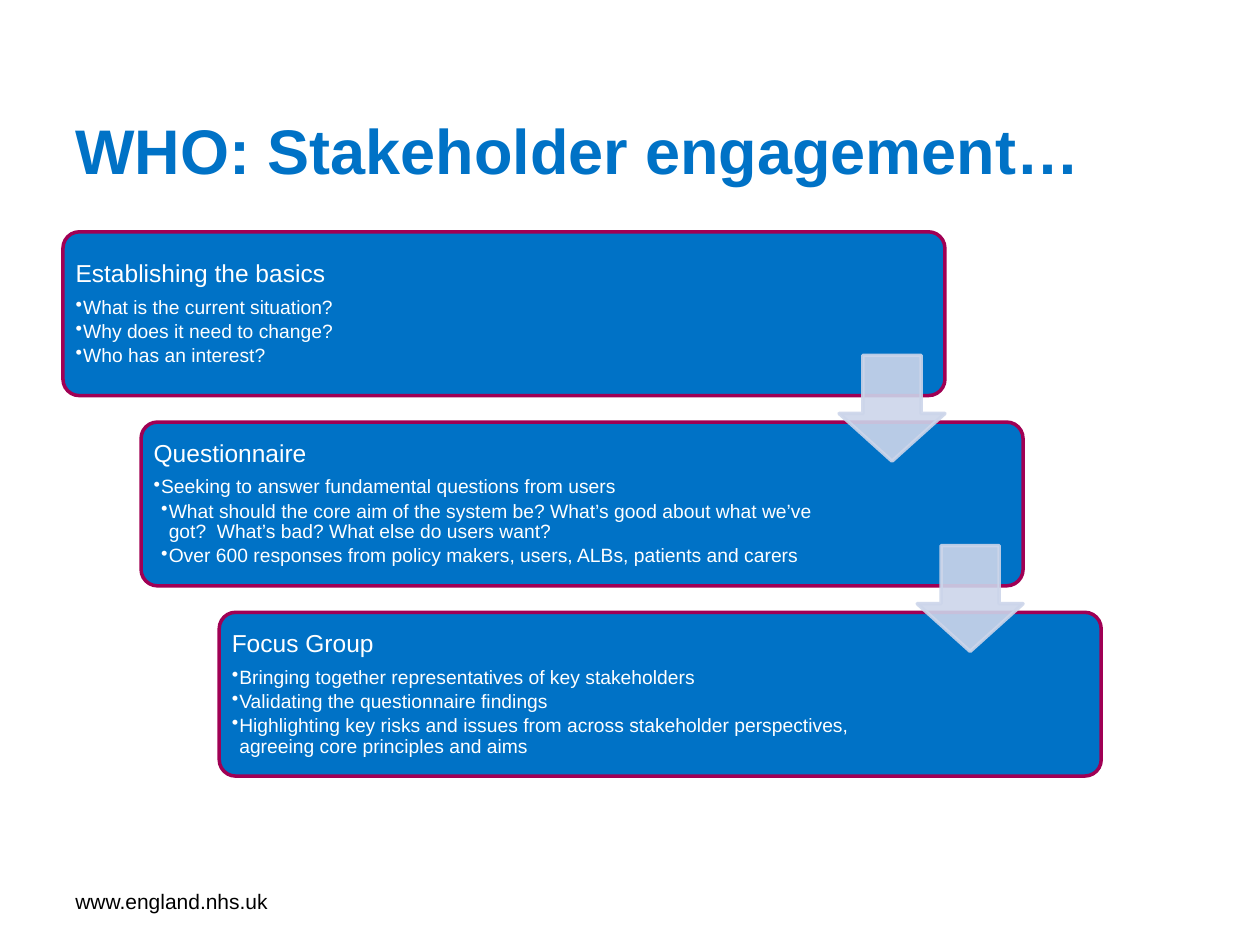
from dataclasses import dataclass

from lxml import etree
from pptx import Presentation
from pptx import util as u
from pptx.dml.color import RGBColor
from pptx.enum import shapes, text
from pptx.oxml.ns import qn

TITLE = "WHO: Stakeholder engagement…"
FOOTER = "www.england.nhs.uk"
STAGES = [
    ("Establishing the basics", 5.6, [
        (1, "What is the current situation?"),
        (1, "Why does it need to change?"),
        (1, "Who has an interest?"),
    ]),
    ("Questionnaire", 5.47, [
        (1, "Seeking to answer fundamental questions from users"),
        (2, "What should the core aim of the system be? What’s good about "
            "what we’ve got?  What’s bad? What else do users want?"),
        (2, "Over 600 responses from policy makers, users, ALBs, patients and carers"),
    ]),
    ("Focus Group", 5.47, [
        (1, "Bringing together representatives of key stakeholders"),
        (1, "Validating the questionnaire findings"),
        (1, "Highlighting key risks and issues from across stakeholder "
            "perspectives, agreeing core principles and aims"),
    ]),
]


@dataclass(frozen=True)
class Theme:
    font: str = "Arial"
    blue: str = "0072C6"
    plum: str = "A00054"
    pale: str = "CCD5EA"
    white: str = "FFFFFF"
    black: str = "000000"
    title: int = 36
    heading: int = 14
    footer: int = 12
    bullet: int = 11
    outline: int = 2
    arrow_opacity: int = 90


THEME = Theme()
LEFT, TOP, STEP_X, STEP_Y = 0.5, 1.84, 0.62, 1.51
CARD_W, CARD_H, ARROW = 7, 1.3, 0.84
PAD, INDENT = 0.04, 0.06


def add_span(para, wording, size, color, bold=False):
    span = para.add_run()
    span.text = wording
    span.font.name = THEME.font
    span.font.size = u.Pt(size)
    span.font.bold = bold
    span.font.color.rgb = RGBColor.from_string(color)


def add_text_box(page, left, top, width, height, inset=None):
    box = page.shapes.add_textbox(*map(u.Inches, (left, top, width, height)))
    frame = box.text_frame
    frame.word_wrap = True
    frame.vertical_anchor = text.MSO_ANCHOR.MIDDLE
    if inset is not None:
        frame.margin_left = frame.margin_right = u.Inches(inset)
        frame.margin_top = frame.margin_bottom = u.Inches(inset)
    return frame


def add_label(page, place, wording, size, color, bold=False):
    frame = add_text_box(page, *place)
    add_span(frame.paragraphs[0], wording, size, color, bold)


def add_block(page, kind, place, adjustments, fill, line, opacity=100):
    block = page.shapes.add_shape(kind, *map(u.Inches, place))
    block.shadow.inherit = False
    for index, value in enumerate(adjustments):
        block.adjustments[index] = value
    block.fill.solid()
    block.fill.fore_color.rgb = RGBColor.from_string(fill)
    block.line.color.rgb = RGBColor.from_string(line)
    block.line.width = u.Pt(THEME.outline)
    if opacity < 100:
        for color in block._element.spPr.iter(qn("a:srgbClr")):
            etree.SubElement(color, qn("a:alpha"), val=str(opacity * 1000))


def set_spacing(para, after):
    para.line_spacing = 0.9
    para.space_after = u.Pt(after)


def add_bullet(frame, level, wording):
    para = frame.add_paragraph()
    para.level = level
    properties = para._p.get_or_add_pPr()
    properties.set("marL", str(u.Inches(INDENT * level)))
    properties.set("indent", str(-u.Inches(INDENT)))
    etree.SubElement(properties, qn("a:buChar"), char="•")
    set_spacing(para, 1.9)
    add_span(para, wording, THEME.bullet, THEME.white)


def add_stage(page, left, top, heading, text_width, bullets):
    add_block(page, shapes.MSO_SHAPE.ROUNDED_RECTANGLE,
              (left, top, CARD_W, CARD_H), [0.1], THEME.blue, THEME.plum)
    frame = add_text_box(page, left + PAD, top + PAD, text_width,
                         CARD_H - 2 * PAD, INDENT)
    para = frame.paragraphs[0]
    set_spacing(para, 5.6)
    add_span(para, heading, THEME.heading, THEME.white)
    for level, wording in bullets:
        add_bullet(frame, level, wording)


def main():
    deck = Presentation()
    deck.slide_width, deck.slide_height = u.Inches(10), u.Inches(7.5)
    page = deck.slides.add_slide(deck.slide_layouts[6])
    add_label(page, (0.5, 6.95, 2.33, 0.4), FOOTER, THEME.footer, THEME.black)
    corners = [(LEFT + i * STEP_X, TOP + i * STEP_Y) for i in range(len(STAGES))]
    for (left, top), stage in zip(corners, STAGES):
        add_stage(page, left, top, *stage)
    for left, top in corners[:-1]:
        add_block(page, shapes.MSO_SHAPE.DOWN_ARROW,
                  (left + CARD_W - ARROW, top + 0.98, ARROW, ARROW),
                  [0.55, 0.45], THEME.pale, THEME.pale, THEME.arrow_opacity)
    add_label(page, (0.5, 0.82, 8.48, 0.73), TITLE, THEME.title, THEME.blue, True)
    deck.save("out.pptx")


if __name__ == "__main__":
    main()
